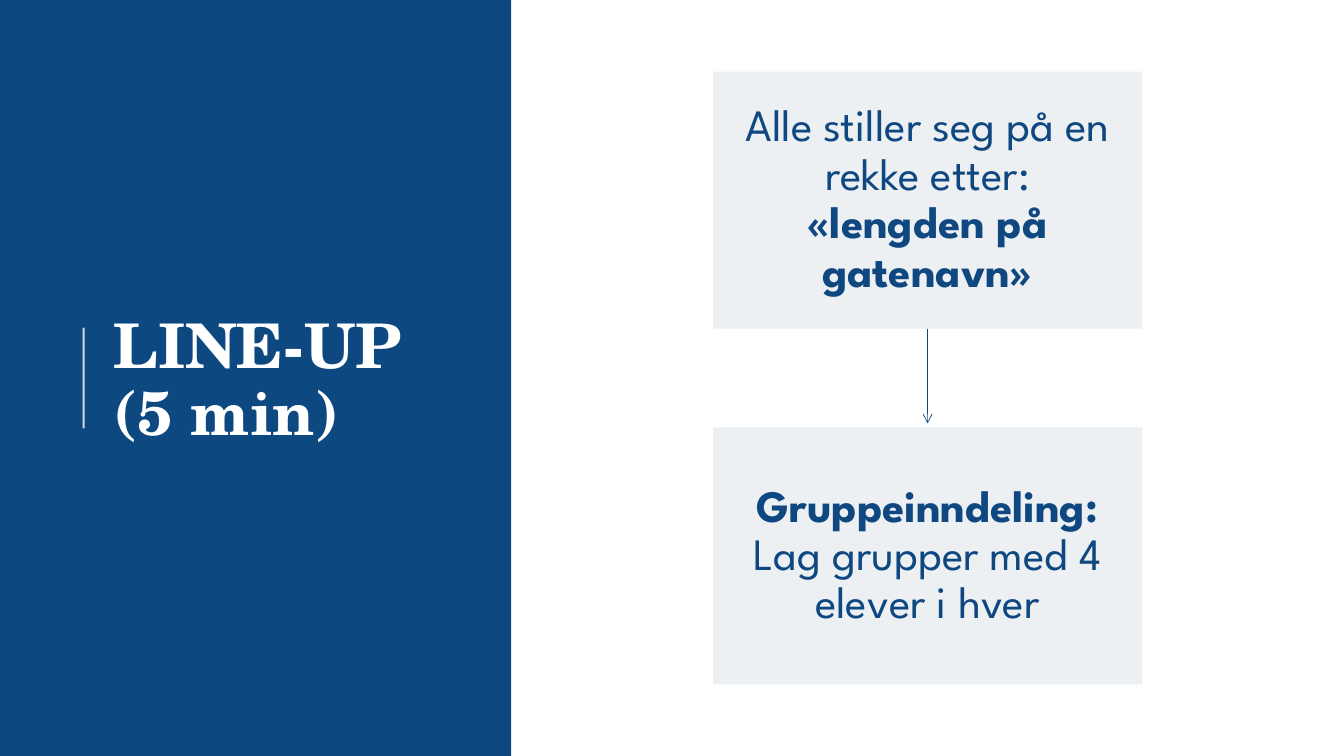
"""Build the line-up slide: a blue title panel beside two linked cards."""
from dataclasses import dataclass

from lxml import etree
from pptx import Presentation
from pptx.dml.color import RGBColor
from pptx.enum.shapes import MSO_CONNECTOR, MSO_SHAPE
from pptx.enum.text import MSO_ANCHOR, PP_ALIGN
from pptx.oxml.ns import qn
from pptx.util import Inches, Pt

RECT = MSO_SHAPE.RECTANGLE
LINE = MSO_CONNECTOR.STRAIGHT
MIDDLE = MSO_ANCHOR.MIDDLE
CENTER = PP_ALIGN.CENTER

COLORS = {"panel": "0E4880", "ink": "0F4881", "card": "EDF0F3", "white": "FFFFFF"}
SERIF = "TeX Gyre Schola"
SANS = "League Spartan"
LEFT, WIDTH, HEIGHT = 7.07, 4.26, 2.55


@dataclass
class Phrase:
    text: str
    bold: bool = False


@dataclass
class Card:
    top: float
    words: list[Phrase]


CARDS = [
    Card(0.71, [Phrase("Alle stiller seg på en rekke etter: "),
                Phrase("«lengden på gatenavn»", True)]),
    Card(4.24, [Phrase("Gruppeinndeling:", True),
                Phrase(" Lag grupper med 4 elever i hver")]),
]


def paint(name: str) -> RGBColor:
    return RGBColor.from_string(COLORS[name])


def add_block(slide, left: float, top: float, width: float, height: float, color: str):
    block = slide.shapes.add_shape(
        RECT, Inches(left), Inches(top), Inches(width), Inches(height))
    block.shadow.inherit = False
    block.fill.solid()
    block.fill.fore_color.rgb = paint(color)
    block.line.fill.background()
    return block


def add_line(slide, x: float, start: float, end: float, color: str, width: float):
    line = slide.shapes.add_connector(
        LINE, Inches(x), Inches(start), Inches(x), Inches(end))
    line.line.color.rgb = paint(color)
    line.line.width = Pt(width)
    etree.SubElement(line.element.spPr, qn("a:effectLst"))
    return line


def add_run(para, phrase: Phrase, font: str, size: float, color: str) -> None:
    run = para.add_run()
    run.text = phrase.text
    run.font.name = font
    run.font.size = Pt(size)
    run.font.bold = phrase.bold
    run.font.color.rgb = paint(color)


def add_title(slide) -> None:
    box = slide.shapes.add_textbox(
        Inches(1.03), Inches(0.78), Inches(3.69), Inches(6.02))
    frame = box.text_frame
    frame.word_wrap = True
    frame.vertical_anchor = MIDDLE
    para = frame.paragraphs[0]
    para.line_spacing = 0.9
    add_run(para, Phrase("LINE-UP", True), SERIF, 44, "white")
    para.add_line_break()
    add_run(para, Phrase("(5 min)", True), SERIF, 44, "white")


def add_card(slide, card: Card) -> None:
    frame = add_block(slide, LEFT, card.top, WIDTH, HEIGHT, "card").text_frame
    frame.word_wrap = True
    frame.vertical_anchor = MIDDLE
    frame.margin_left = frame.margin_right = Inches(0.21)
    frame.margin_top = frame.margin_bottom = Inches(0.22)
    para = frame.paragraphs[0]
    para.alignment = CENTER
    para.line_spacing = 0.9
    for phrase in card.words:
        add_run(para, phrase, SANS, 32, "ink")


def main() -> None:
    deck = Presentation()
    deck.slide_width, deck.slide_height = Inches(13.33), Inches(7.5)
    slide = deck.slides.add_slide(deck.slide_layouts[6])

    add_block(slide, 0, 0, 5.07, 7.5, "panel")
    rule = add_line(slide, 0.83, 4.25, 3.25, "white", 1.5)
    tint = rule.element.spPr.find(".//" + qn("a:srgbClr"))
    etree.SubElement(tint, qn("a:alpha"), val="80000")
    add_title(slide)

    first, second = CARDS
    arrow = add_line(slide, LEFT + WIDTH / 2, first.top + HEIGHT,
                     second.top - 0.04, "ink", 0.5)
    stroke = arrow.element.spPr.find(qn("a:ln"))
    etree.SubElement(stroke, qn("a:tailEnd"), type="arrow")
    for card in CARDS:
        add_card(slide, card)

    deck.save("out.pptx")


if __name__ == "__main__":
    main()
